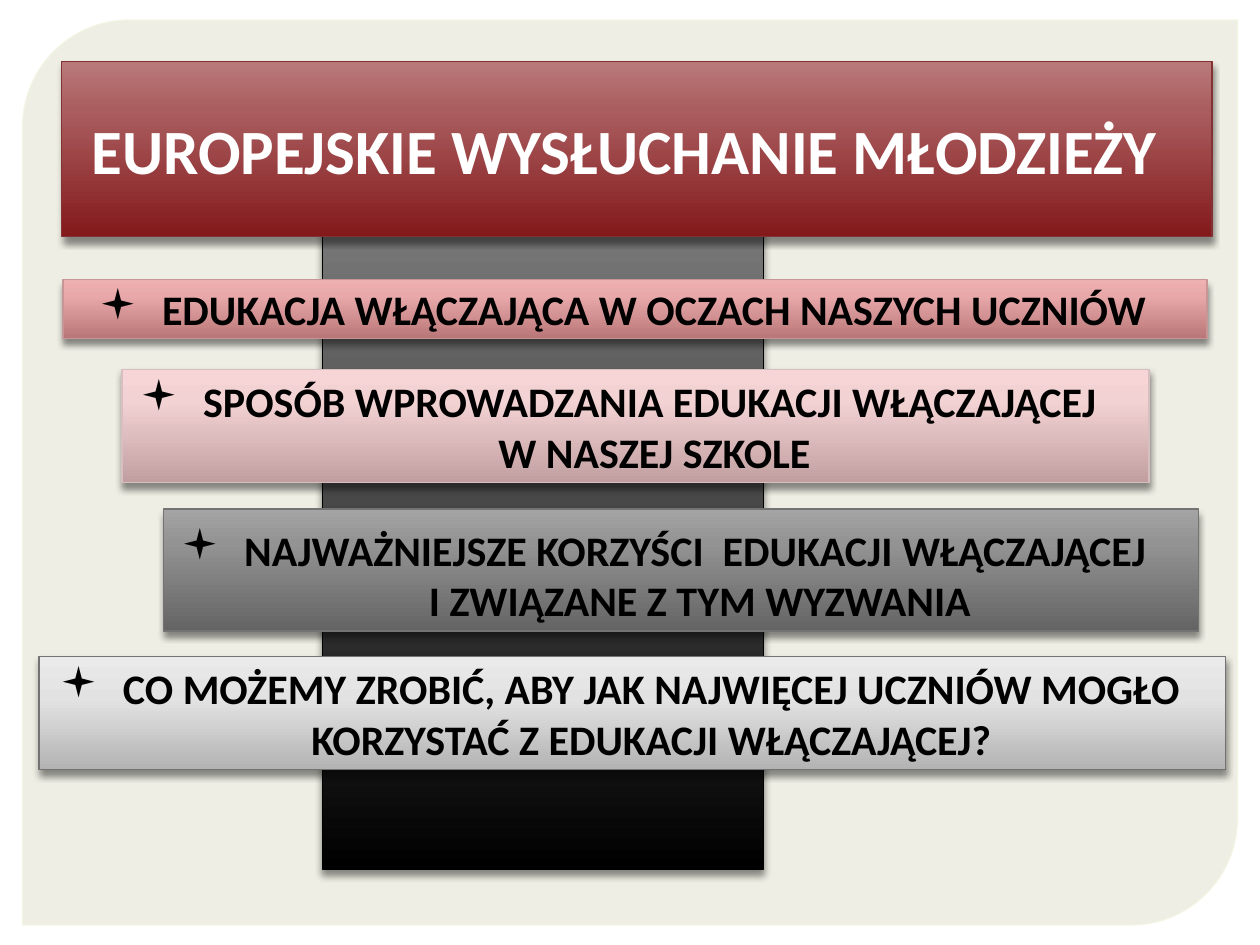
import pptx
import pptx.util
from lxml import etree
from pptx.dml.color import RGBColor
from pptx.enum.shapes import MSO_SHAPE
from pptx.enum.text import MSO_ANCHOR, PP_ALIGN
from pptx.oxml.ns import qn
import copy

Pt = pptx.util.Pt
THEME = {
    "font": "Calibri", "title": 36, "body": 24,
    "light": "FFFFFF", "dark": "000000",
    "panel": "E5E6D7", "panel_line": "F2F4E2",
    # gradient stops from bottom to top, then the outline
    "black": ([(0, "000000"), (0.72, "5E5E5E"), (1, "7F7F7F")], "000000"),
    "red": ([(0, "83191B"), (0.72, "AA5D5F"), (1, "B9797A")], "833133"),
    "rose": ([(0, "B97678"), (0.72, "E8A8A9"), (1, "EFB0B1")], "C89596"),
    "pink": ([(0, "C19FA1"), (0.72, "F3D2D3"), (1, "F7D5D6")], "D7BEBF"),
    "grey": ([(0, "646464"), (0.72, "939393"), (1, "A4A4A4")], "737373"),
    "silver": ([(0, "B3B3B3"), (0.62, "E2E2E2"), (1, "EAEAEA")], "737373"),
}


def add_bar(s, box, style):
    """Add a rectangle with a vertical gradient and a soft shadow below."""
    stops, line = THEME[style]
    sp = s.shapes.add_shape(MSO_SHAPE.RECTANGLE, *map(Pt, box))
    sp.fill.gradient()
    sp.fill.gradient_angle = 90
    gs_list = sp.element.spPr.find(qn("a:gradFill")).find(qn("a:gsLst"))
    gs_list.append(copy.deepcopy(gs_list[-1]))
    for stop, (position, color) in zip(sp.fill.gradient_stops, stops):
        stop.position = position
        stop.color.rgb = RGBColor.from_string(color)
    sp.line.color.rgb = RGBColor.from_string(line)
    sp.line.width = Pt(0.75)
    sp.shadow.inherit = False
    effects = sp.element.spPr.find(qn("a:effectLst"))
    shadow = etree.SubElement(effects, qn("a:outerShdw"), blurRad=str(Pt(4)),
                              dist=str(Pt(3)), dir="5400000", rotWithShape="0")
    color = etree.SubElement(shadow, qn("a:srgbClr"), val=THEME["dark"])
    etree.SubElement(color, qn("a:alpha"), val="43000")
    return sp


def add_text(sp, lines, size, color, anchor):
    """Write centred bold text into a bar and return its paragraph."""
    tf = sp.text_frame
    tf.word_wrap = True
    tf.vertical_anchor = anchor
    tf.margin_left = tf.margin_top = tf.margin_bottom = Pt(3.6)
    tf.margin_right = Pt(18)
    p = tf.paragraphs[0]
    p.alignment = PP_ALIGN.CENTER
    for i, line in enumerate(lines):
        if i:
            p.add_line_break()
        r = p.add_run()
        r.text = line
        r.font.name = THEME["font"]
        r.font.size = Pt(THEME[size])
        r.font.bold = True
        r.font.color.rgb = RGBColor.from_string(THEME[color])
    return p


prs = pptx.Presentation()
prs.slide_width, prs.slide_height = Pt(720), Pt(540)
s = prs.slides.add_slide(prs.slide_layouts[6])

# Background panel with two rounded corners
panel = s.shapes.add_shape(MSO_SHAPE.ROUND_2_DIAG_RECTANGLE,
                           Pt(13), Pt(11.5), Pt(694), Pt(517))
panel.adjustments[0], panel.adjustments[1] = 0.118, 0
panel.shadow.inherit = False
panel.fill.solid()
panel.fill.fore_color.rgb = RGBColor.from_string(THEME["panel"])
panel.line.color.rgb = RGBColor.from_string(THEME["panel_line"])
panel.line.width = Pt(0.87)
spPr = panel.element.spPr
for fill, alpha in ((spPr.find(qn("a:solidFill")), "65000"),
                    (spPr.find(qn("a:ln")).find(qn("a:solidFill")), "88000")):
    etree.SubElement(fill[0], qn("a:alpha"), val=alpha)

# Dark column and title bar
add_bar(s, (184.3, 109.4, 252, 387.4), "black")
title = add_bar(s, (35.3, 35.3, 657.4, 100), "red")
add_text(title, ["EUROPEJSKIE WYSŁUCHANIE MŁODZIEŻY"], "title", "light", MSO_ANCHOR.MIDDLE)

# Bulleted topic bars
TOPICS = [
    ((36, 159.8, 653.8, 33.8), "rose", MSO_ANCHOR.MIDDLE,
     ["EDUKACJA WŁĄCZAJĄCA W OCZACH NASZYCH UCZNIÓW"]),
    ((69.8, 211, 586.8, 64.8), "pink", MSO_ANCHOR.BOTTOM,
     ["SPOSÓB WPROWADZANIA EDUKACJI WŁĄCZAJĄCEJ  W NASZEJ SZKOLE"]),
    ((93.6, 290.9, 591.1, 69.8), "grey", MSO_ANCHOR.BOTTOM,
     ["NAJWAŻNIEJSZE KORZYŚCI  EDUKACJI WŁĄCZAJĄCEJ ", "I ZWIĄZANE Z TYM WYZWANIA"]),
    ((22.3, 375.1, 678.2, 64.8), "silver", MSO_ANCHOR.MIDDLE,
     ["CO MOŻEMY ZROBIĆ, ABY JAK NAJWIĘCEJ UCZNIÓW MOGŁO KORZYSTAĆ Z EDUKACJI WŁĄCZAJĄCEJ?"]),
]
for box, style, anchor, lines in TOPICS:
    p = add_text(add_bar(s, box, style), lines, "body", "dark", anchor)
    pPr = p._p.get_or_add_pPr()
    pPr.set("marL", str(Pt(36)))
    pPr.set("indent", str(-Pt(36)))
    etree.SubElement(pPr, qn("a:buFont"), typeface="Wingdings")
    etree.SubElement(pPr, qn("a:buChar"), char="▪")

prs.save("out.pptx")
